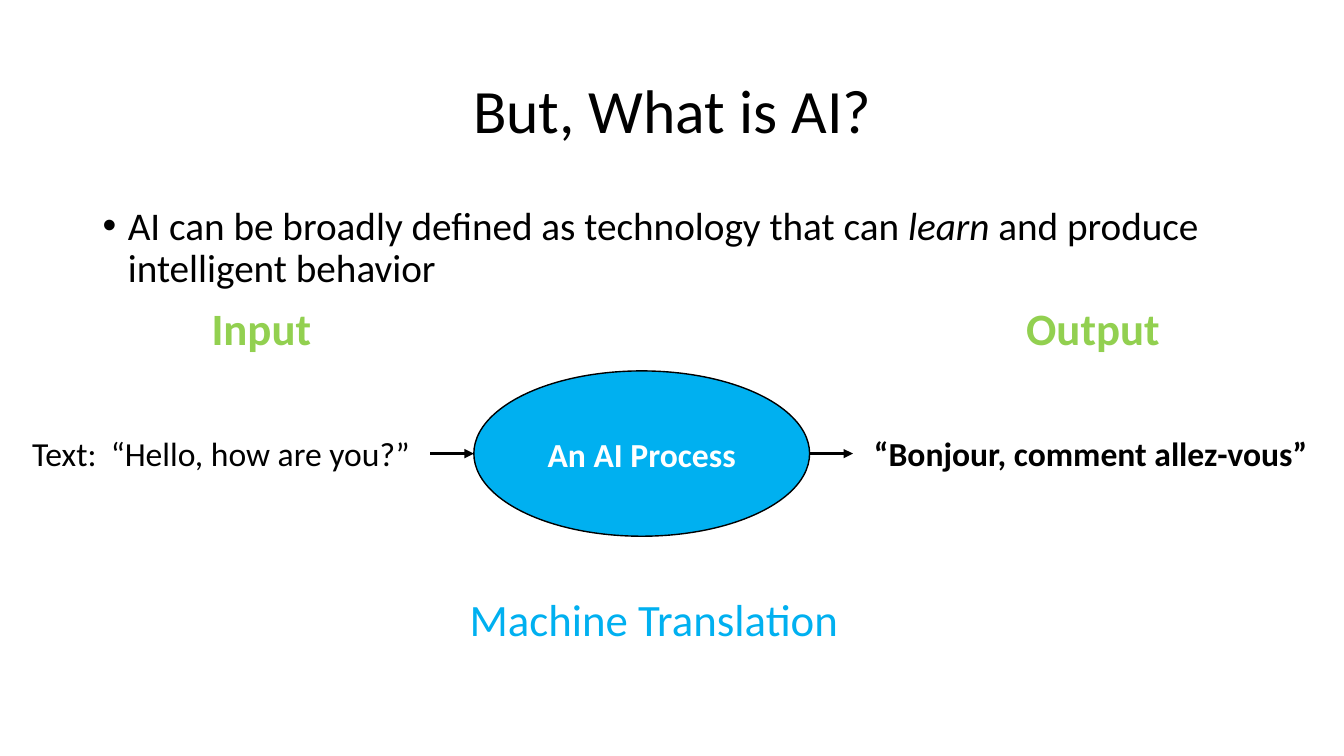
from dataclasses import dataclass

from lxml.etree import SubElement as Sub
from pptx import Presentation
from pptx.dml.color import RGBColor as RGB
from pptx.enum.shapes import MSO_CONNECTOR as Link, MSO_SHAPE as Form
from pptx.enum.text import MSO_ANCHOR as Anchor, MSO_AUTO_SIZE as Fit, PP_ALIGN as Align
from pptx.oxml.ns import qn
from pptx.util import Pt

PX = 9144  # EMU per px, 100 px to the inch


@dataclass(frozen=True)
class Theme:
    font: str = "Calibri"
    ink: str = "000000"
    paper: str = "FFFFFF"
    green: str = "92D050"
    blue: str = "00B0F0"
    title: int = 44
    head: int = 32
    body: int = 28
    label: int = 24


class Board:
    def __init__(self, deck, theme):
        self.theme = theme
        self.slide = deck.slides.add_slide(deck.slide_layouts[5])
        self.shapes = self.slide.shapes

    def run(self, para, text, size, color, bold=False, italic=False):
        run = para.add_run()
        run.text = text
        font = run.font
        font.name, font.size = self.theme.font, Pt(size)
        font.bold, font.italic = bold, italic
        font.color.rgb = RGB.from_string(color)

    def title(self, box, text):
        shape = self.shapes.title
        shape.left, shape.top, shape.width, shape.height = (n * PX for n in box)
        shape.text_frame.vertical_anchor = Anchor.MIDDLE
        para = shape.text_frame.paragraphs[0]
        para.alignment, para.line_spacing = Align.CENTER, 0.9
        self.run(para, text, self.theme.title, self.theme.ink)

    def bullet(self, box, parts):
        """Add one bulleted paragraph from (text, italic) parts."""
        frame = self.shapes.add_textbox(*(n * PX for n in box)).text_frame
        frame.word_wrap = True
        para = frame.paragraphs[0]
        para.line_spacing, para.space_before = 0.9, Pt(10)
        for text, italic in parts:
            self.run(para, text, self.theme.body, self.theme.ink, italic=italic)
        props = para._p.get_or_add_pPr()
        props.set("marL", str(25 * PX))
        props.set("indent", str(-25 * PX))
        Sub(props, qn("a:buFont")).set("typeface", "Arial")
        Sub(props, qn("a:buChar")).set("char", "•")

    def label(self, box, text, size, color, bold=False):
        frame = self.shapes.add_textbox(*(n * PX for n in box)).text_frame
        frame.word_wrap = False
        frame.auto_size = Fit.SHAPE_TO_FIT_TEXT
        self.run(frame.paragraphs[0], text, size, color, bold)

    def oval(self, box, text):
        shape = self.shapes.add_shape(Form.OVAL, *(n * PX for n in box))
        shape.shadow.inherit = False
        shape.fill.solid()
        shape.fill.fore_color.rgb = RGB.from_string(self.theme.blue)
        shape.line.color.rgb = RGB.from_string(self.theme.ink)
        shape.line.width = Pt(1)
        shape.text_frame.vertical_anchor = Anchor.MIDDLE
        para = shape.text_frame.paragraphs[0]
        para.alignment = Align.CENTER
        self.run(para, text, self.theme.label, self.theme.paper, bold=True)

    def arrow(self, left, right, y):
        link = self.shapes.add_connector(
            Link.STRAIGHT, *(n * PX for n in (left, y, right, y)))
        link.line.color.rgb = RGB.from_string(self.theme.ink)
        link.line.width = Pt(2.25)
        Sub(link.line._ln, qn("a:tailEnd")).set("type", "triangle")
        Sub(link._element.spPr, qn("a:effectLst"))


def main():
    deck = Presentation()
    deck.slide_width, deck.slide_height = 1333 * PX, 750 * PX
    theme = Theme()
    board = Board(deck, theme)

    board.title((92, 40, 1150, 145), "But, What is AI?")
    board.bullet((92, 200, 1150, 476), [
        ("AI can be broadly defined as technology that can ", False),
        ("learn", True),
        (" and produce intelligent behavior", False),
    ])
    for left, width, text in ((200, 120, "Input"), (1008, 154, "Output")):
        board.label((left, 293, width, 64), text, theme.head, theme.green, bold=True)
    for left, width, text, bold in (
        (22, 85, "Text:", False),
        (100, 319, "“Hello, how are you?”", False),
        (857, 454, "“Bonjour, comment allez-vous”", True),
    ):
        board.label((left, 425, width, 50), text, theme.label, theme.ink, bold)

    left, width, mid, reach = 470, 333, 450, 43
    board.oval((left, mid - 82, width, 164), "An AI Process")
    for start in (left - reach, left + width):
        board.arrow(start, start + reach, mid)
    board.label((456, 582, 390, 64), "Machine Translation", theme.head, theme.blue)

    deck.save("out.pptx")


if __name__ == "__main__":
    main()
